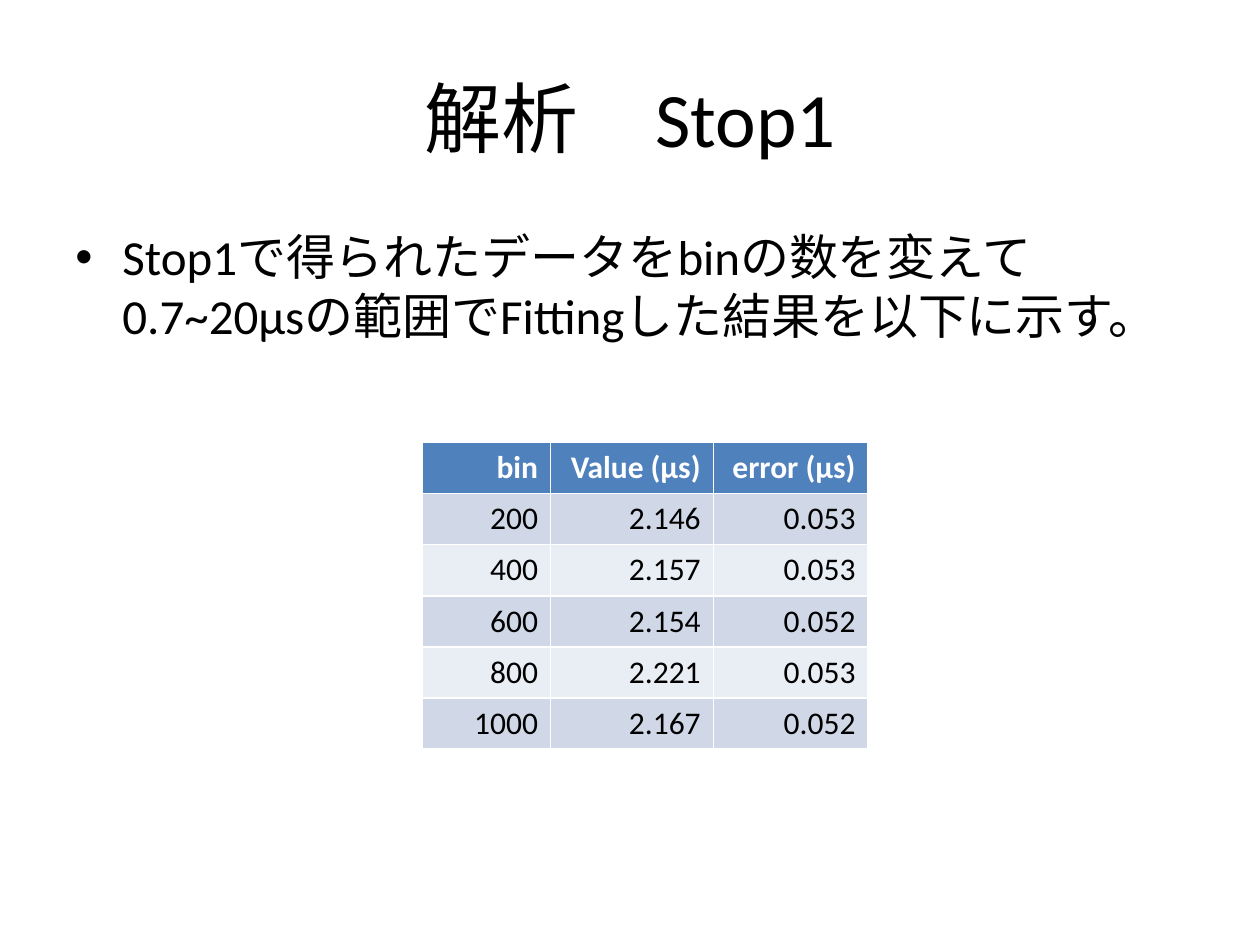
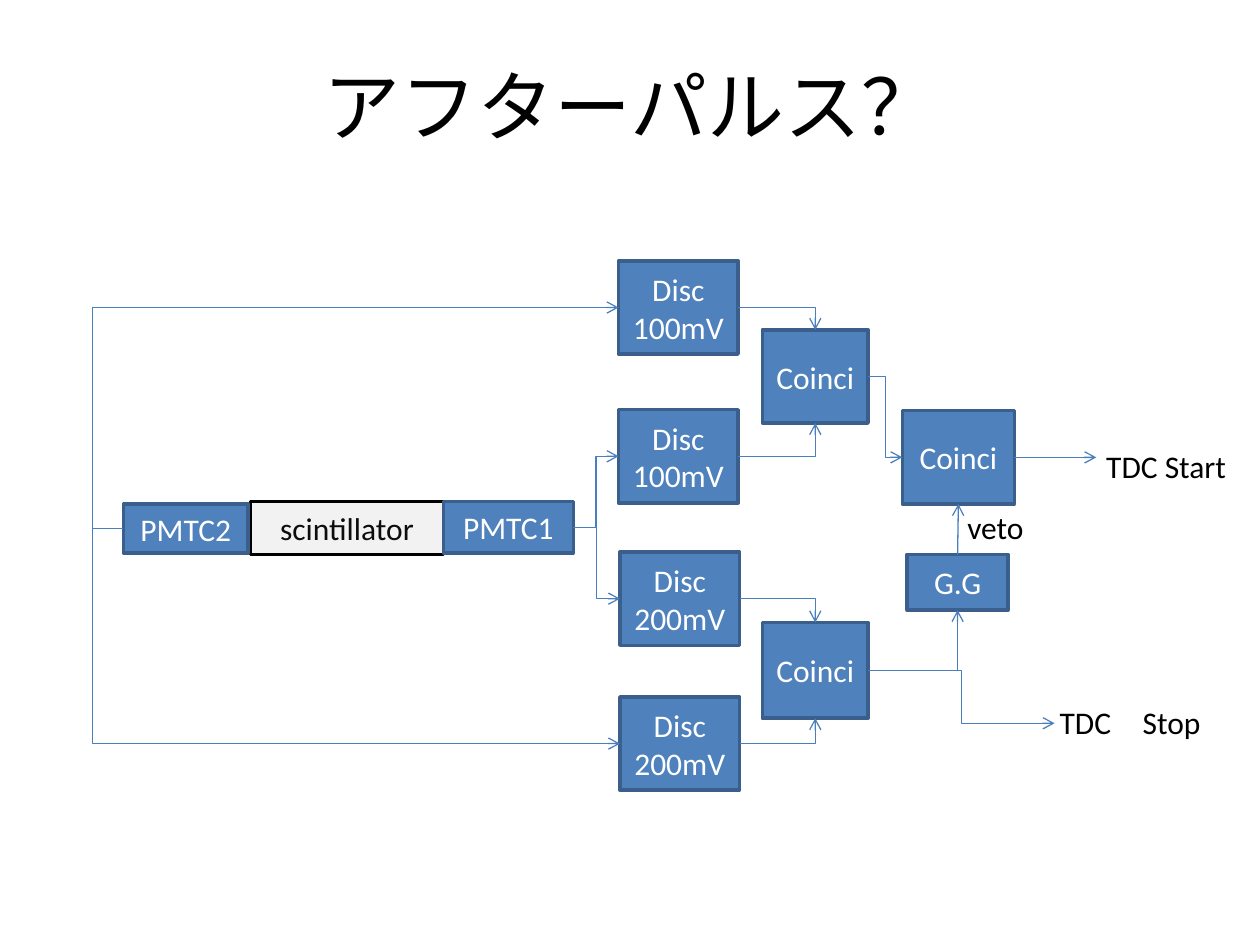
"""Build two slides: a fit-result table and a trigger logic diagram."""
from lxml.etree import SubElement
from pptx import Presentation
from pptx.dml.color import RGBColor
from pptx.enum.shapes import MSO_CONNECTOR, MSO_SHAPE
from pptx.enum.text import MSO_ANCHOR, PP_ALIGN
from pptx.oxml.ns import qn
from pptx.util import Cm, Pt

COLOURS = {
    "black": "000000", "white": "FFFFFF", "blue": "4F81BD", "edge": "3A5F8C",
    "wire": "4B7EBC", "pale": "F2F2F2", "ink": "0D0D0D",
    "band": "D0D8E8", "light": "E9EDF4",
}
TOP, LEFT, BOTTOM, RIGHT = range(4)


def colour(name):
    return RGBColor.from_string(COLOURS[name])


class SlideWriter:
    """Holds the deck style and draws on the current page."""

    font = "Calibri"

    def __init__(self):
        self.deck = Presentation()
        self.deck.slide_width, self.deck.slide_height = Cm(25.4), Cm(19.05)
        self.page = None

    def style(self, para, size, ink, align=PP_ALIGN.LEFT, bold=False):
        para.alignment = align
        para.font.name, para.font.size = self.font, Pt(size)
        para.font.bold = bold
        para.font.color.rgb = colour(ink)

    def start(self, title, left, top):
        self.page = self.deck.slides.add_slide(self.deck.slide_layouts[5])
        box = self.page.shapes.title
        box.left, box.top, box.width, box.height = Cm(left), Cm(top), Cm(22.86), Cm(3.18)
        box.text_frame.text = title
        box.text_frame.vertical_anchor = MSO_ANCHOR.MIDDLE
        self.style(box.text_frame.paragraphs[0], 44, "black", PP_ALIGN.CENTER)

    def text(self, words, left, top, width, height=1.02, size=18):
        box = self.page.shapes.add_textbox(Cm(left), Cm(top), Cm(width), Cm(height))
        box.text_frame.word_wrap = True
        box.text_frame.text = words
        para = box.text_frame.paragraphs[0]
        self.style(para, size, "black")
        return para

    def bullet(self, words, left, top, width, height):
        para = self.text(words, left, top, width, height, 28)
        para.space_before = Pt(5.6)
        properties = para._p.get_or_add_pPr()
        properties.set("marL", str(Cm(0.95)))
        properties.set("indent", str(-Cm(0.95)))
        SubElement(properties, qn("a:buFont"), typeface="Arial")
        SubElement(properties, qn("a:buChar"), char="•")

    def table(self, rows, left, top, widths, row_height):
        frame = self.page.shapes.add_table(
            len(rows), len(widths), Cm(left), Cm(top),
            Cm(sum(widths)), Cm(row_height * len(rows)))
        for column, width in zip(frame.table.columns, widths):
            column.width = Cm(width)
        for row_number, row in enumerate(rows):
            header = row_number == 0
            fill = "blue" if header else ("light", "band")[row_number % 2]
            for column_number, words in enumerate(row):
                cell = frame.table.cell(row_number, column_number)
                cell.text = words
                cell.fill.solid()
                cell.fill.fore_color.rgb = colour(fill)
                self.style(cell.text_frame.paragraphs[0], 18,
                           "white" if header else "black", PP_ALIGN.RIGHT, header)

    def block(self, words, left, top, width, height, fill="blue", edge="edge", ink="white"):
        box = self.page.shapes.add_shape(
            MSO_SHAPE.RECTANGLE, Cm(left), Cm(top), Cm(width), Cm(height))
        box.shadow.inherit = False
        box.fill.solid()
        box.fill.fore_color.rgb = colour(fill)
        box.line.color.rgb = colour(edge)
        box.line.width = Pt(2)
        box.text_frame.text = words
        box.text_frame.vertical_anchor = MSO_ANCHOR.MIDDLE
        for para in box.text_frame.paragraphs:
            self.style(para, 18, ink, PP_ALIGN.CENTER)
        return box

    def wire(self, source, side, target, entry=None, bend=None, kind="bentConnector3"):
        """Draw an arrow from a block side to a block side or to a free point."""
        straight = kind == "line"
        wire = self.page.shapes.add_connector(
            MSO_CONNECTOR.STRAIGHT if straight else MSO_CONNECTOR.ELBOW, 0, 0, 0, 0)
        wire.begin_connect(source, side)
        if entry is None:
            wire.end_x, wire.end_y = Cm(target[0]), Cm(target[1])
        else:
            wire.end_connect(target, entry)
        wire.line.color.rgb = colour("wire")
        wire.line.width = Pt(0.75)
        properties = wire._element.spPr
        SubElement(properties.find(qn("a:ln")), qn("a:tailEnd"), type="arrow")
        SubElement(properties, qn("a:effectLst"))
        geometry = properties.find(qn("a:prstGeom"))
        geometry.set("prst", kind)
        if bend is not None:
            share = (Cm(bend) - wire.begin_x) / (wire.end_x - wire.begin_x)
            SubElement(geometry.find(qn("a:avLst")), qn("a:gd"),
                       name="adj1", fmla=f"val {round(share * 100000)}")


def fit_page(writer):
    writer.start("解析　Stop1", 1.27, 0.76)
    writer.bullet("Stop1で得られたデータをbinの数を変えて0.7~20μsの範囲でFittingした結果を以下に示す。",
                  1.27, 4.45, 22.86, 12.57)
    writer.table([
        ("bin", "Value (μs)", "error (μs)"),
        ("200", "2.146", "0.053"),
        ("400", "2.157", "0.053"),
        ("600", "2.154", "0.052"),
        ("800", "2.221", "0.053"),
        ("1000", "2.167", "0.052"),
    ], 8.51, 8.92, (2.59, 3.28, 3.12), 1.03)


def logic_page(writer):
    writer.start("アフターパルス？", 1.3, 0.53)
    discs = [writer.block(f"Disc\n{level}mV", left, top, 2.41, 1.88)
             for level, left, top in ((100, 12.47, 5.26), (100, 12.47, 8.26),
                                      (200, 12.5, 11.13), (200, 12.5, 14.05))]
    writer.block("scintillator", 5.05, 10.11, 3.89, 1.07, "pale", "black", "ink")
    right_tube = writer.block("PMTC1", 8.94, 10.11, 2.62, 1.04)
    left_tube = writer.block("PMTC2", 2.49, 10.16, 2.51, 0.99)
    start_pair = writer.block("Coinci", 15.37, 6.65, 2.13, 1.88)
    stop_pair = writer.block("Coinci", 15.37, 12.55, 2.13, 1.93)
    start_gate = writer.block("Coinci", 18.19, 8.28, 2.26, 1.88)
    gate_generator = writer.block("G.G", 18.29, 11.18, 2.03, 1.12)

    for disc in (discs[0], discs[3]):
        writer.wire(left_tube, LEFT, disc, LEFT, bend=1.87)
    for disc in discs[1:3]:
        writer.wire(right_tube, RIGHT, disc, LEFT)
    for number, disc in enumerate(discs):
        writer.wire(disc, RIGHT, (start_pair, stop_pair)[number // 2],
                    (TOP, BOTTOM)[number % 2], kind="bentConnector2")
    writer.wire(start_pair, RIGHT, start_gate, LEFT)
    writer.wire(stop_pair, RIGHT, gate_generator, BOTTOM, kind="bentConnector2")
    writer.wire(stop_pair, RIGHT, (21.26, 14.58))
    writer.wire(start_gate, RIGHT, (22.1, 9.22), kind="line")
    writer.wire(gate_generator, TOP, start_gate, BOTTOM, kind="line")

    writer.text("veto", 19.25, 10.11, 2.44)
    writer.text("TDC Start", 22.05, 8.89, 3.35)
    writer.text("TDC　Stop", 21.11, 14.05, 3.4)


def main():
    writer = SlideWriter()
    fit_page(writer)
    logic_page(writer)
    writer.deck.save("out.pptx")


if __name__ == "__main__":
    main()
